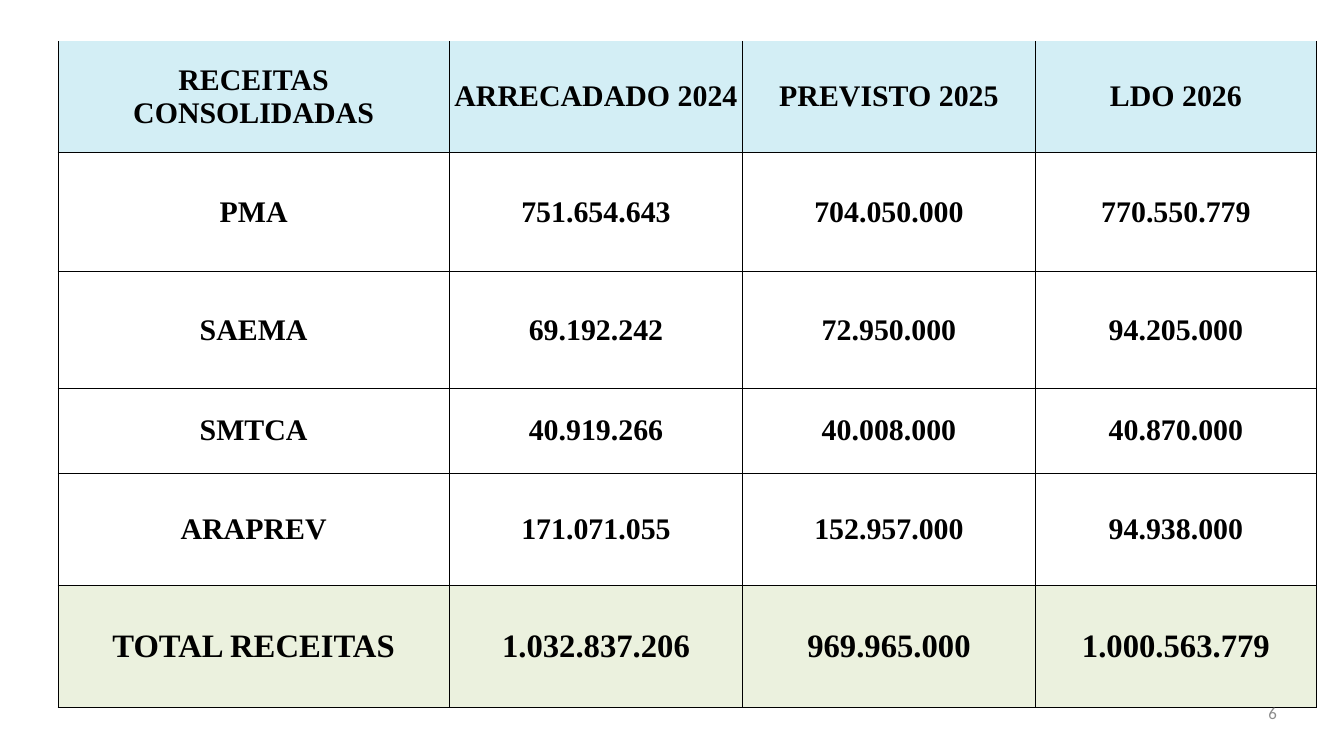
from dataclasses import dataclass

from lxml.etree import SubElement
from pptx import Presentation
from pptx.dml.color import RGBColor
from pptx.enum.text import MSO_ANCHOR, PP_ALIGN
from pptx.oxml.ns import qn
from pptx.util import Inches, Pt


@dataclass(frozen=True)
class Theme:
    ink: str = "000000"
    header_fill: str = "D3EEF5"
    total_fill: str = "EBF1DE"
    number_ink: str = "8C8C8C"
    table_font: str = "Times New Roman"
    number_font: str = "Calibri"
    body_size: int = 32
    total_size: int = 35
    number_size: int = 18
    border: float = 0.5


THEME = Theme()
SLIDE_WIDTH, SLIDE_HEIGHT = 20, 11.25

# Grid of the table: a spacer column and a spacer row come first
COLUMNS = [0.44, 5.83, 4.36, 4.36, 4.18]
ROWS = [0.58, 1.65, 1.78, 1.73, 1.27, 1.67, 1.82]

REVENUES = [
    ["RECEITAS CONSOLIDADAS", "ARRECADADO 2024", "PREVISTO 2025", "LDO 2026"],
    ["PMA", "751.654.643", "704.050.000", "770.550.779"],
    ["SAEMA", "69.192.242", "72.950.000", "94.205.000"],
    ["SMTCA", "40.919.266", "40.008.000", "40.870.000"],
    ["ARAPREV", "171.071.055", "152.957.000", "94.938.000"],
    ["TOTAL RECEITAS", "1.032.837.206", "969.965.000", "1.000.563.779"],
]


def set_borders(cell, drawn_sides):
    """Draw the given sides (letters of LRTB) and clear the others."""
    properties = cell._tc.get_or_add_tcPr()
    for side in "LRTB":
        line = SubElement(properties, qn(f"a:ln{side}"), w=str(Pt(THEME.border)))
        if side in drawn_sides:
            fill = SubElement(line, qn("a:solidFill"))
            SubElement(fill, qn("a:srgbClr"), val=THEME.ink)
        else:
            SubElement(line, qn("a:noFill"))


def set_fill(cell, color):
    if color:
        cell.fill.solid()
        cell.fill.fore_color.rgb = RGBColor.from_string(color)
    else:
        cell.fill.background()


def style_paragraph(paragraph, align, font, size, color, bold=False):
    paragraph.alignment = align
    paragraph.font.name = font
    paragraph.font.size = Pt(size)
    paragraph.font.bold = bold
    paragraph.font.color.rgb = RGBColor.from_string(color)


def fill_entry(cell, entry, size):
    cell.text = entry
    cell.vertical_anchor = MSO_ANCHOR.MIDDLE
    cell.margin_left = cell.margin_right = cell.margin_top = Inches(0.01)
    cell.margin_bottom = 0
    style_paragraph(cell.text_frame.paragraphs[0], PP_ALIGN.CENTER,
                    THEME.table_font, size, THEME.ink, bold=True)


def add_revenue_table(slide, left, top, width, height):
    table = slide.shapes.add_table(
        len(ROWS), len(COLUMNS), Inches(left), Inches(top), Inches(width), Inches(height)
    ).table
    table.first_row = table.horz_banding = False
    for column, share in zip(table.columns, COLUMNS):
        column.width = Inches(width * share / sum(COLUMNS))
    for row, share in zip(table.rows, ROWS):
        row.height = Inches(height * share / sum(ROWS))

    # Spacer row and column
    for c in range(len(COLUMNS)):
        set_borders(table.cell(0, c), "")
        set_fill(table.cell(0, c), None)
    table.cell(0, 0).merge(table.cell(0, len(COLUMNS) - 1))
    for r in range(1, len(ROWS)):
        set_borders(table.cell(r, 0), "R")
        set_fill(table.cell(r, 0), None)

    # Header, entities and total
    header, total = 1, len(REVENUES)
    fills = {header: THEME.header_fill, total: THEME.total_fill}
    for r, entries in enumerate(REVENUES, start=1):
        size = THEME.total_size if r == total else THEME.body_size
        for c, entry in enumerate(entries, start=1):
            cell = table.cell(r, c)
            set_borders(cell, "LRB" if r == header else "LRTB")
            set_fill(cell, fills.get(r))
            fill_entry(cell, entry, size)


def add_page_number(slide, number, left, top, width, height):
    frame = slide.shapes.add_textbox(
        Inches(left), Inches(top), Inches(width), Inches(height)).text_frame
    frame.word_wrap = True
    frame.margin_left = frame.margin_right = frame.margin_top = frame.margin_bottom = 0
    frame.text = number
    style_paragraph(frame.paragraphs[0], PP_ALIGN.RIGHT,
                    THEME.number_font, THEME.number_size, THEME.number_ink)


def main():
    deck = Presentation()
    deck.slide_width, deck.slide_height = Inches(SLIDE_WIDTH), Inches(SLIDE_HEIGHT)
    slide = deck.slides.add_slide(deck.slide_layouts[6])
    add_revenue_table(slide, 0.42, 0.03, sum(COLUMNS), sum(ROWS))
    add_page_number(slide, "6", 0.72 * SLIDE_WIDTH, 0.93 * SLIDE_HEIGHT,
                    0.23 * SLIDE_WIDTH, 0.05 * SLIDE_HEIGHT)
    deck.save("out.pptx")


if __name__ == "__main__":
    main()
